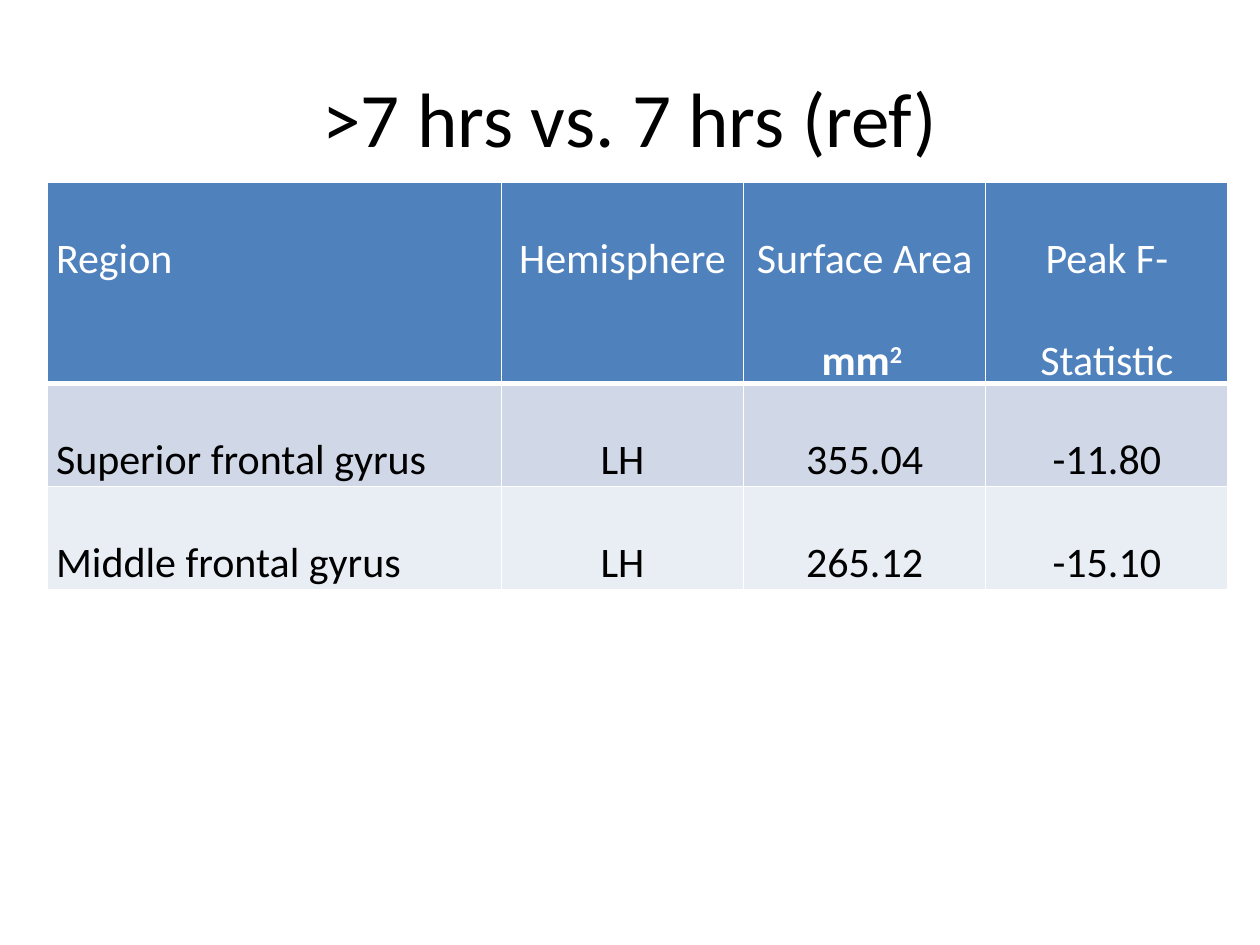
from dataclasses import dataclass

from lxml import etree
from pptx import Presentation
from pptx import util as u
from pptx.dml.color import RGBColor
from pptx.enum import text
from pptx.oxml.ns import qn


@dataclass(frozen=True)
class Theme:
    font: str = "Calibri"
    title_size: float = 44
    body_size: float = 24
    ink: str = "000000"
    paper: str = "FFFFFF"
    header: str = "4F81BD"
    bands: tuple = ("D0D8E8", "E9EDF4")
    line: float = 1
    header_line: float = 3


class Deck:
    def __init__(self, theme, width, height):
        self.theme = theme
        self.prs = Presentation()
        self.prs.slide_width, self.prs.slide_height = u.Pt(width), u.Pt(height)
        self.s = None

    def slide(self):
        self.s = self.prs.slides.add_slide(self.prs.slide_layouts[6])

    def run(self, p, content, size, color, bold=False, baseline=0):
        r = p.add_run()
        r.text = content
        style = {"name": self.theme.font, "size": u.Pt(size), "bold": bold}
        for key, value in style.items():
            setattr(r.font, key, value)
        r.font.color.rgb = RGBColor.from_string(color)
        if baseline:
            r.font._element.set("baseline", str(baseline * 1000))

    def title(self, content, x, y, w, h):
        tf = self.s.shapes.add_textbox(*map(u.Pt, (x, y, w, h))).text_frame
        style = {"word_wrap": True, "vertical_anchor": text.MSO_ANCHOR.MIDDLE}
        for key, value in style.items():
            setattr(tf, key, value)
        p = tf.paragraphs[0]
        p.alignment = text.PP_ALIGN.CENTER
        self.run(p, content, self.theme.title_size, self.theme.ink)

    def borders(self, cell, bottom):
        t = self.theme
        tc_pr = cell._tc.get_or_add_tcPr()
        for side, width in zip("LRTB", (t.line, t.line, t.line, bottom)):
            ln = etree.SubElement(tc_pr, qn(f"a:ln{side}"), w=str(u.Pt(width)))
            fill = etree.SubElement(ln, qn("a:solidFill"))
            etree.SubElement(fill, qn("a:srgbClr"), val=t.paper)

    def cell(self, cell, runs, align, fill, color, bottom):
        margins = {"margin_left": 5, "margin_right": 5, "margin_top": 0, "margin_bottom": 0}
        for key, value in margins.items():
            setattr(cell, key, u.Pt(value))
        self.borders(cell, bottom)
        cell.fill.solid()
        cell.fill.fore_color.rgb = RGBColor.from_string(fill)
        p = cell.text_frame.paragraphs[0]
        p.alignment, p.line_spacing = align, 2.0
        for content, style in runs:
            self.run(p, content, self.theme.body_size, color, **style)

    def table(self, rows, x, y, widths, row_height):
        t = self.theme
        size = sum(widths), row_height * len(rows)
        table = self.s.shapes.add_table(
            len(rows), len(widths), *map(u.Pt, (x, y, *size))).table
        for column, width in zip(table.columns, widths):
            column.width = u.Pt(width)
        for i, row in enumerate(rows):
            table.rows[i].height = u.Pt(row_height)
            if i == 0:
                look = t.header, t.paper, t.header_line
            else:
                look = t.bands[(i - 1) % 2], t.ink, t.line
            for j, value in enumerate(row):
                runs = [(value, {})] if isinstance(value, str) else value
                align = text.PP_ALIGN.CENTER if j else text.PP_ALIGN.LEFT
                self.cell(table.cell(i, j), runs, align, *look)

    def save(self):
        self.prs.save("out.pptx")


def main():
    surface_area = [
        ("Surface Area ", {}),
        ("mm", {"bold": True}),
        ("2 ", {"bold": True, "baseline": 30}),
    ]
    rows = [
        ["Region", "Hemisphere", surface_area, "Peak F-Statistic"],
        ["Superior frontal gyrus", "LH", "355.04", "-11.80"],
        ["Middle frontal gyrus", "LH", "265.12", "-15.10"],
    ]
    deck = Deck(Theme(), 720, 540)
    deck.slide()
    deck.title(">7 hrs vs. 7 hrs (ref)", 36, 21.6, 648, 90)
    deck.table(rows, 27, 104, [259.5] + [138.4] * 3, 58.8)
    deck.save()


if __name__ == "__main__":
    main()
